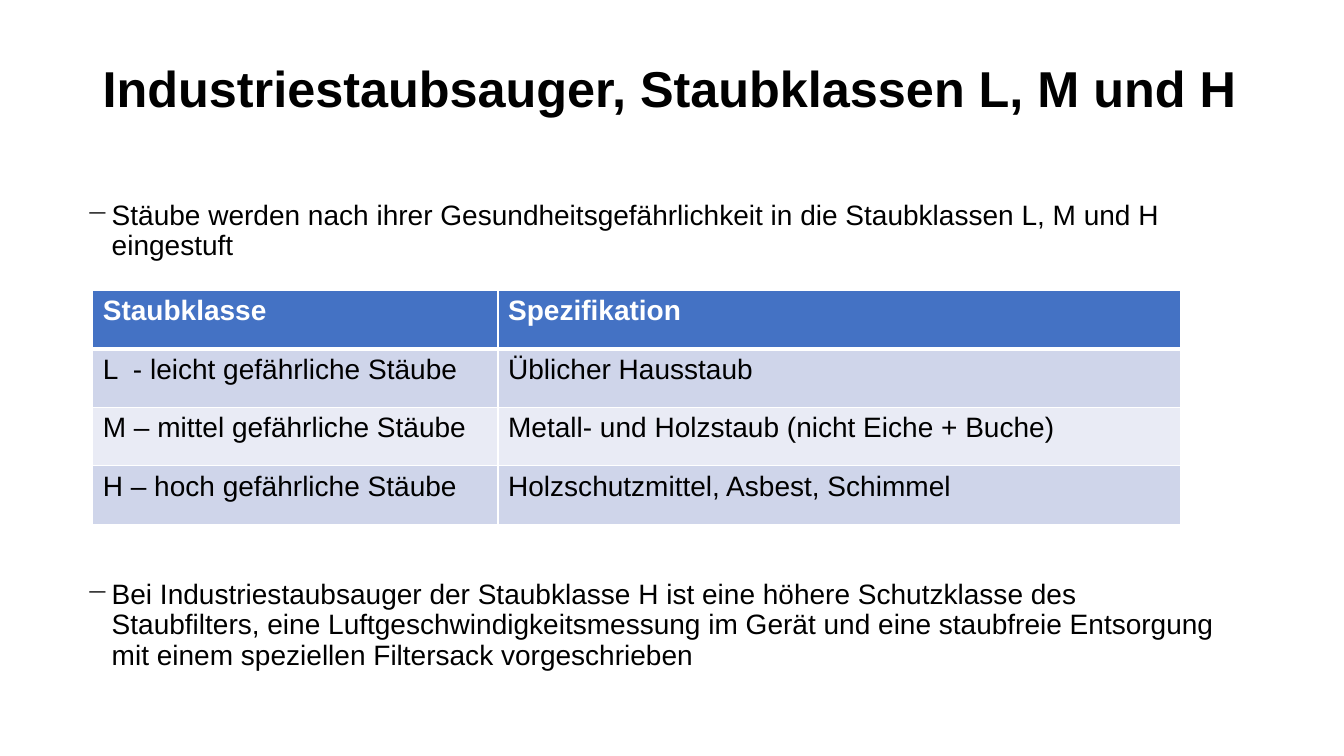
"""Build a slide on industrial vacuum cleaners and dust classes L, M and H."""
import pptx
import pptx.dml.color
import pptx.enum.text
import pptx.oxml
import pptx.oxml.ns
import pptx.util
from lxml import etree
from pptx.util import Inches


def color(hex_value):
    """Turn a hex string into a colour."""
    return pptx.dml.color.RGBColor.from_string(hex_value)


class DustSlide:
    """Hold the style and the current slide."""

    font_name = "Arial"
    title_size = 36
    body_size = 20
    ink = "000000"
    paper = "FFFFFF"
    header_fill = "4472C4"
    band_fills = ("CFD5EA", "E9EBF5")

    def __init__(self, slide):
        """Keep the slide to draw on."""
        self.slide = slide

    def style(self, paragraph, size, hex_value, bold=False):
        """Set the font of a paragraph."""
        paragraph.font.name = self.font_name
        paragraph.font.size = pptx.util.Pt(size)
        paragraph.font.bold = bold
        paragraph.font.color.rgb = color(hex_value)

    def text(self, wording, left, top, width, height, size, bold=False):
        """Add a wrapped text box and return its frame."""
        frame = self.slide.shapes.add_textbox(
            Inches(left), Inches(top), Inches(width), Inches(height)
        ).text_frame
        frame.word_wrap = True
        paragraph = frame.paragraphs[0]
        paragraph.text = wording
        paragraph.line_spacing = 0.9
        self.style(paragraph, size, self.ink, bold)
        return frame

    def title(self, wording, left, top, width, height):
        """Add the bold heading, centred vertically."""
        heading = self.text(wording, left, top, width, height, self.title_size, True)
        heading.vertical_anchor = pptx.enum.text.MSO_ANCHOR.MIDDLE

    def bullet(self, wording, left, top, width, height):
        """Add a statement with a dash and a hanging indent."""
        statement = self.text(wording, left, top, width, height, self.body_size)
        paragraph = statement.paragraphs[0]
        paragraph.space_before = pptx.util.Pt(10)
        properties = paragraph._p.get_or_add_pPr()
        properties.set("marL", str(Inches(0.25)))
        properties.set("indent", str(Inches(-0.25)))
        dash = pptx.oxml.parse_xml(
            f'<a:buChar {pptx.oxml.ns.nsdecls("a")} char="−"/>'
        )
        properties.insert_element_before(dash, "a:tabLst", "a:defRPr", "a:extLst")

    def borders(self, cell, bottom_width):
        """Draw the white lines around a cell."""
        properties = cell._tc.get_or_add_tcPr()
        for side, width in (("L", 1), ("R", 1), ("T", 1), ("B", bottom_width)):
            properties.append(pptx.oxml.parse_xml(
                f'<a:ln{side} {pptx.oxml.ns.nsdecls("a")} w="{pptx.util.Pt(width)}">'
                f'<a:solidFill><a:srgbClr val="{self.paper}"/></a:solidFill>'
                f'</a:ln{side}>'
            ))

    def table(self, rows, left, top, column_widths, row_height):
        """Add a table with a header row and banded rows below."""
        grid = self.slide.shapes.add_table(
            len(rows), len(column_widths), Inches(left), Inches(top),
            Inches(sum(column_widths)), Inches(row_height * len(rows)),
        ).table
        for column, width in zip(grid.columns, column_widths):
            column.width = Inches(width)
        for row_index, wordings in enumerate(rows):
            header = row_index == 0
            fill = self.header_fill if header else self.band_fills[(row_index - 1) % 2]
            above_width = 3 if row_index == 1 else 1
            for column_index, wording in enumerate(wordings):
                cell = grid.cell(row_index, column_index)
                cell.text = wording
                self.style(cell.text_frame.paragraphs[0], self.body_size,
                           self.paper if header else self.ink, header)
                self.borders(cell, 3 if header else 1)
                if above_width > 1:
                    top_line = cell._tc.tcPr.find(pptx.oxml.ns.qn("a:lnT"))
                    top_line.set("w", str(pptx.util.Pt(above_width)))
                cell.fill.solid()
                cell.fill.fore_color.rgb = color(fill)


def main():
    """Build and save the slide."""
    presentation = pptx.Presentation()
    presentation.slide_width = Inches(13.33)
    presentation.slide_height = Inches(7.5)
    dust = DustSlide(presentation.slides.add_slide(presentation.slide_layouts[6]))

    dust.title("Industriestaubsauger, Staubklassen L, M und H", 0.92, 0.3, 11.5, 1.21)
    dust.table(
        [
            ("Staubklasse", "Spezifikation"),
            ("L  - leicht gefährliche Stäube", "Üblicher Hausstaub"),
            ("M – mittel gefährliche Stäube", "Metall- und Holzstaub (nicht Eiche + Buche)"),
            ("H – hoch gefährliche Stäube", "Holzschutzmittel, Asbest, Schimmel"),
        ],
        0.92, 2.88, (4.02, 6.77), 0.58,
    )
    dust.bullet(
        "Stäube werden nach ihrer Gesundheitsgefährlichkeit in die Staubklassen "
        "L, M und H eingestuft",
        0.76, 1.95, 11.5, 0.73,
    )
    dust.bullet(
        "Bei Industriestaubsauger der Staubklasse H ist eine höhere Schutzklasse des "
        "Staubfilters, eine Luftgeschwindigkeitsmessung im Gerät und eine staubfreie "
        "Entsorgung mit einem speziellen Filtersack vorgeschrieben",
        0.76, 5.71, 11.5, 1.06,
    )
    presentation.save("out.pptx")


if __name__ == "__main__":
    main()
